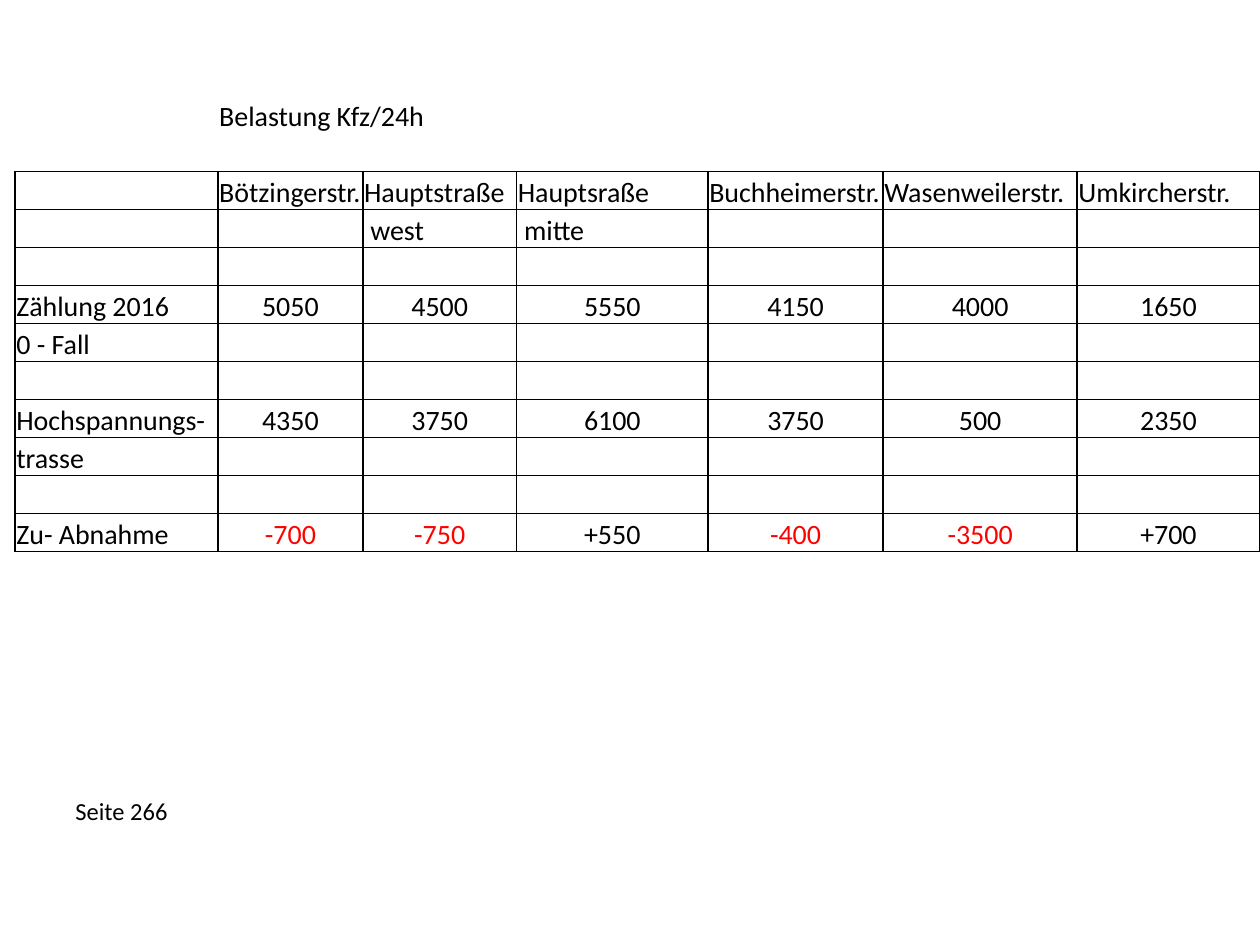
from lxml.etree import SubElement
from pptx import Presentation
from pptx.dml.color import RGBColor
from pptx.enum.text import MSO_ANCHOR, PP_ALIGN
from pptx.oxml.ns import qn
from pptx.util import Inches, Pt

FONT = "Calibri"
BLACK, RED, WHITE = "000000", "FF0000", "FFFFFF"
TABLE_SIZE = 16
COLUMN_WIDTHS = [1.61, 1.15, 1.22, 1.52, 1.39, 1.54, 1.45]
ROW_COUNT, TABLE_HEIGHT = 12, 3.62
GRID_START = 2  # rows above this one hold the caption and have no grid

# Row index -> texts from the first column on
ROWS = {
    0: ["", "Belastung Kfz/24h"],
    2: ["", "Bötzingerstr.", "Hauptstraße", "Hauptsraße",
        "Buchheimerstr.", "Wasenweilerstr.", "Umkircherstr."],
    3: ["", "", " west", " mitte"],
    5: ["Zählung 2016", "5050", "4500", "5550", "4150", "4000", "1650"],
    6: ["0 - Fall"],
    8: ["Hochspannungs-", "4350", "3750", "6100", "3750", "500", "2350"],
    9: ["trasse"],
    11: ["Zu- Abnahme", "-700", "-750", "+550", "-400", "-3500", "+700"],
}


def rgb(value):
    return RGBColor.from_string(value)


def write_text(frame, text, size=TABLE_SIZE, color=BLACK, align=PP_ALIGN.LEFT):
    paragraph = frame.paragraphs[0]
    paragraph.alignment = align
    if not text:
        # An empty paragraph takes its line height from its end mark
        SubElement(paragraph._p, qn("a:endParaRPr"), sz=str(size * 100))
        return
    span = paragraph.add_run()
    span.text = text
    span.font.name = FONT
    span.font.size = Pt(size)
    span.font.color.rgb = rgb(color)


def add_borders(cell, sides):
    """Draw 1 pt black lines on the sides named by the letters L, R, T, B."""
    properties = cell._tc.get_or_add_tcPr()
    for side in sides:
        line = SubElement(properties, qn(f"a:ln{side}"), w=str(Pt(1)))
        fill = SubElement(line, qn("a:solidFill"))
        SubElement(fill, qn("a:srgbClr"), val=BLACK)


def format_cell(cell, text, sides):
    add_borders(cell, sides)
    cell.fill.solid()
    cell.fill.fore_color.rgb = rgb(WHITE)
    cell.margin_left = cell.margin_right = cell.margin_top = Inches(0.01)
    cell.margin_bottom = 0
    cell.vertical_anchor = MSO_ANCHOR.BOTTOM
    is_number = text.lstrip("+-").isdigit()
    write_text(cell.text_frame, text,
               color=RED if text.startswith("-") else BLACK,
               align=PP_ALIGN.CENTER if is_number else PP_ALIGN.LEFT)


def add_traffic_table(page):
    table = page.shapes.add_table(
        ROW_COUNT, len(COLUMN_WIDTHS), Inches(0.12), Inches(0.76),
        Inches(sum(COLUMN_WIDTHS)), Inches(TABLE_HEIGHT)).table
    table.first_row = table.horz_banding = False
    for column, width in zip(table.columns, COLUMN_WIDTHS):
        column.width = Inches(width)
    for row_index, row in enumerate(table.rows):
        row.height = Inches(TABLE_HEIGHT / ROW_COUNT)
        texts = ROWS.get(row_index, [])
        if row_index >= GRID_START:
            sides = "LRTB"
        else:
            sides = "B" if row_index == GRID_START - 1 else ""
        for column_index, cell in enumerate(row.cells):
            text = texts[column_index] if column_index < len(texts) else ""
            format_cell(cell, text, sides)
    table.cell(0, 1).merge(table.cell(0, 2))


def add_page_label(page):
    box = page.shapes.add_textbox(
        Inches(0.5), Inches(6.27), Inches(1.82), Inches(0.43))
    box.text_frame.word_wrap = True
    write_text(box.text_frame, "Seite 266", size=14)


def main():
    deck = Presentation()
    deck.slide_width, deck.slide_height = Inches(10), Inches(7.5)
    page = deck.slides.add_slide(deck.slide_layouts.get_by_name("Blank"))
    add_page_label(page)
    add_traffic_table(page)
    deck.save("out.pptx")


if __name__ == "__main__":
    main()
